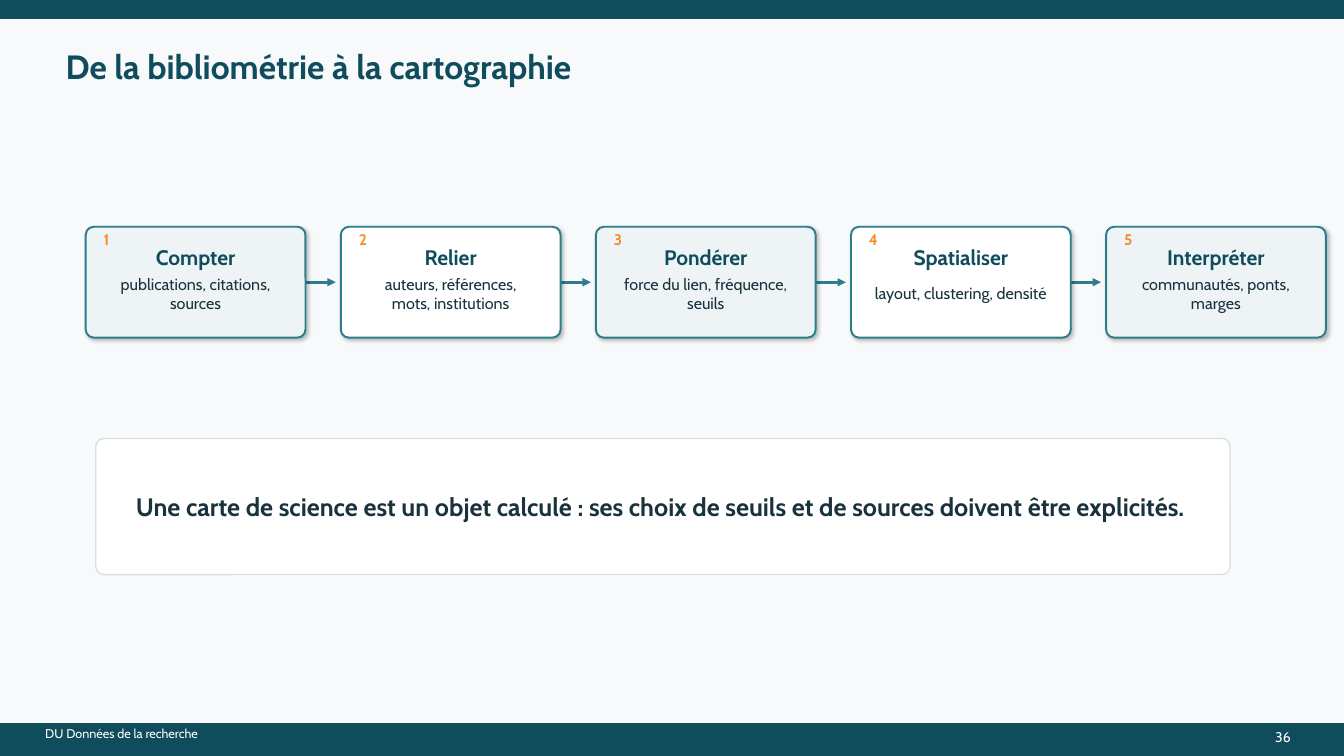
from dataclasses import dataclass

from lxml import etree
from pptx import Presentation
from pptx.dml.color import RGBColor
from pptx.enum.shapes import MSO_CONNECTOR, MSO_SHAPE
from pptx.enum.text import MSO_ANCHOR, MSO_AUTO_SIZE, PP_ALIGN
from pptx.oxml import parse_xml
from pptx.oxml.ns import nsdecls, qn
from pptx.util import Inches, Pt

RECT, ROUNDED = MSO_SHAPE.RECTANGLE, MSO_SHAPE.ROUNDED_RECTANGLE
STRAIGHT = MSO_CONNECTOR.STRAIGHT
LEFT, CENTER = PP_ALIGN.LEFT, PP_ALIGN.CENTER
TOP, MIDDLE = MSO_ANCHOR.TOP, MSO_ANCHOR.MIDDLE

# Content
TITLE = "De la bibliométrie à la cartographie"
STEPS = [
    ("Compter", "publications, citations, sources"),
    ("Relier", "auteurs, références, mots, institutions"),
    ("Pondérer", "force du lien, fréquence, seuils"),
    ("Spatialiser", "layout, clustering, densité"),
    ("Interpréter", "communautés, ponts, marges"),
]
MESSAGE = ("Une carte de science est un objet calculé : ses choix de seuils "
           "et de sources doivent être explicités.")
FOOTER = "DU Données de la recherche"
PAGE_NUMBER = "36"


@dataclass(frozen=True)
class Theme:
    font: str = "Cabin"
    background: str = "F7F9FB"
    primary: str = "0F4C5C"
    accent: str = "2E7D8A"
    number: str = "F28C28"
    ink: str = "19323C"
    tint: str = "EEF4F6"
    white: str = "FFFFFF"
    border: str = "D7E1E6"
    title_size: float = 24
    message_size: float = 18
    step_size: float = 15
    detail_size: float = 11.5
    number_size: float = 11
    page_size: float = 10
    footer_size: float = 9


THEME = Theme()

# Card row geometry, in inches
CARD_LEFT, CARD_TOP, CARD_WIDTH, CARD_HEIGHT = 0.85, 2.25, 2.18, 1.1
CARD_PITCH, ARROW_LENGTH = 2.53, 0.3


def color(value):
    return RGBColor.from_string(value)


def write(box, text, size, ink, bold=False, align=LEFT, anchor=MIDDLE):
    frame = box.text_frame
    frame.text = text
    frame.word_wrap = True
    frame.auto_size = MSO_AUTO_SIZE.NONE
    frame.vertical_anchor = anchor
    para = frame.paragraphs[0]
    para.alignment = align
    for span in para.runs:
        span.font.name = THEME.font
        span.font.size = Pt(size)
        span.font.bold = bold
        span.font.color.rgb = color(ink)


def add_text(page, bounds, *args, **options):
    box = page.shapes.add_textbox(*map(Inches, bounds))
    write(box, *args, **options)


def add_panel(page, kind, bounds, fill, line, width=1, radius=None):
    panel = page.shapes.add_shape(kind, *map(Inches, bounds))
    panel.shadow.inherit = False
    panel.fill.solid()
    panel.fill.fore_color.rgb = color(fill)
    panel.line.color.rgb = color(line)
    panel.line.width = Pt(width)
    if radius:
        panel.adjustments[0] = radius / min(bounds[2:])
    return panel


def add_soft_shadow(panel):
    effects = panel._element.spPr.find(qn("a:effectLst"))
    effects.append(parse_xml(
        f'<a:outerShdw {nsdecls("a")} blurRad="{Pt(3)}" dist="{Pt(2)}" '
        f'dir="{45 * 60000}" algn="bl" rotWithShape="0"><a:srgbClr val="000000">'
        '<a:alpha val="25000"/></a:srgbClr></a:outerShdw>'))


def add_arrow(page, left, right, y):
    arrow = page.shapes.add_connector(
        STRAIGHT, Inches(left), Inches(y), Inches(right), Inches(y))
    arrow.line.color.rgb = color(THEME.accent)
    arrow.line.width = Pt(1.8)
    etree.SubElement(arrow.line._get_or_add_ln(), qn("a:tailEnd"), type="triangle")
    etree.SubElement(arrow._element.spPr, qn("a:effectLst"))


def add_step(page, index, name, detail):
    left = CARD_LEFT + index * CARD_PITCH
    fill = THEME.white if index % 2 else THEME.tint
    card = add_panel(page, ROUNDED, (left, CARD_TOP, CARD_WIDTH, CARD_HEIGHT),
                     fill, THEME.accent, 1.4, 0.08)
    add_soft_shadow(card)
    add_text(page, (left + 0.08, CARD_TOP + 0.06, 0.28, 0.12), str(index + 1),
             THEME.number_size, THEME.number, bold=True)
    add_text(page, (left + 0.15, CARD_TOP + 0.18, 1.88, 0.24), name,
             THEME.step_size, THEME.primary, bold=True, align=CENTER)
    add_text(page, (left + 0.14, CARD_TOP + 0.47, 1.9, 0.38), detail,
             THEME.detail_size, THEME.ink, align=CENTER)


def main():
    deck = Presentation()
    deck.slide_width, deck.slide_height = Inches(13.33), Inches(7.5)
    page = deck.slides.add_slide(deck.slide_layouts[5])
    page.background.fill.solid()
    page.background.fill.fore_color.rgb = color(THEME.background)

    # Top and bottom bands
    for top, height in ((0, 0.18), (7.18, 0.32)):
        add_panel(page, RECT, (0, top, 13.33, height), THEME.primary, THEME.primary)

    # Title
    title = page.shapes.title
    title.left, title.top, title.width, title.height = map(
        Inches, (0.55, 0.45, 8.7, 0.42))
    write(title, TITLE, THEME.title_size, THEME.primary, bold=True)

    # Arrows, then the numbered steps over them
    for index in range(len(STEPS) - 1):
        start = CARD_LEFT + index * CARD_PITCH + CARD_WIDTH
        add_arrow(page, start, start + ARROW_LENGTH, CARD_TOP + CARD_HEIGHT / 2)
    for index, (name, detail) in enumerate(STEPS):
        add_step(page, index, name, detail)

    # Key message
    add_panel(page, ROUNDED, (0.95, 4.35, 11.25, 1.35),
              THEME.white, THEME.border, radius=0.08)
    add_text(page, (1.15, 4.72, 10.8, 0.6), MESSAGE, THEME.message_size,
             THEME.ink, bold=True, align=CENTER)

    # Footer
    add_text(page, (0.35, 7.2, 3.4, 0.16), FOOTER, THEME.footer_size, THEME.white)
    add_text(page, (12.5, 7.18, 0.45, 0.2), PAGE_NUMBER, THEME.page_size,
             THEME.white, align=CENTER, anchor=TOP)

    deck.save("out.pptx")


if __name__ == "__main__":
    main()
